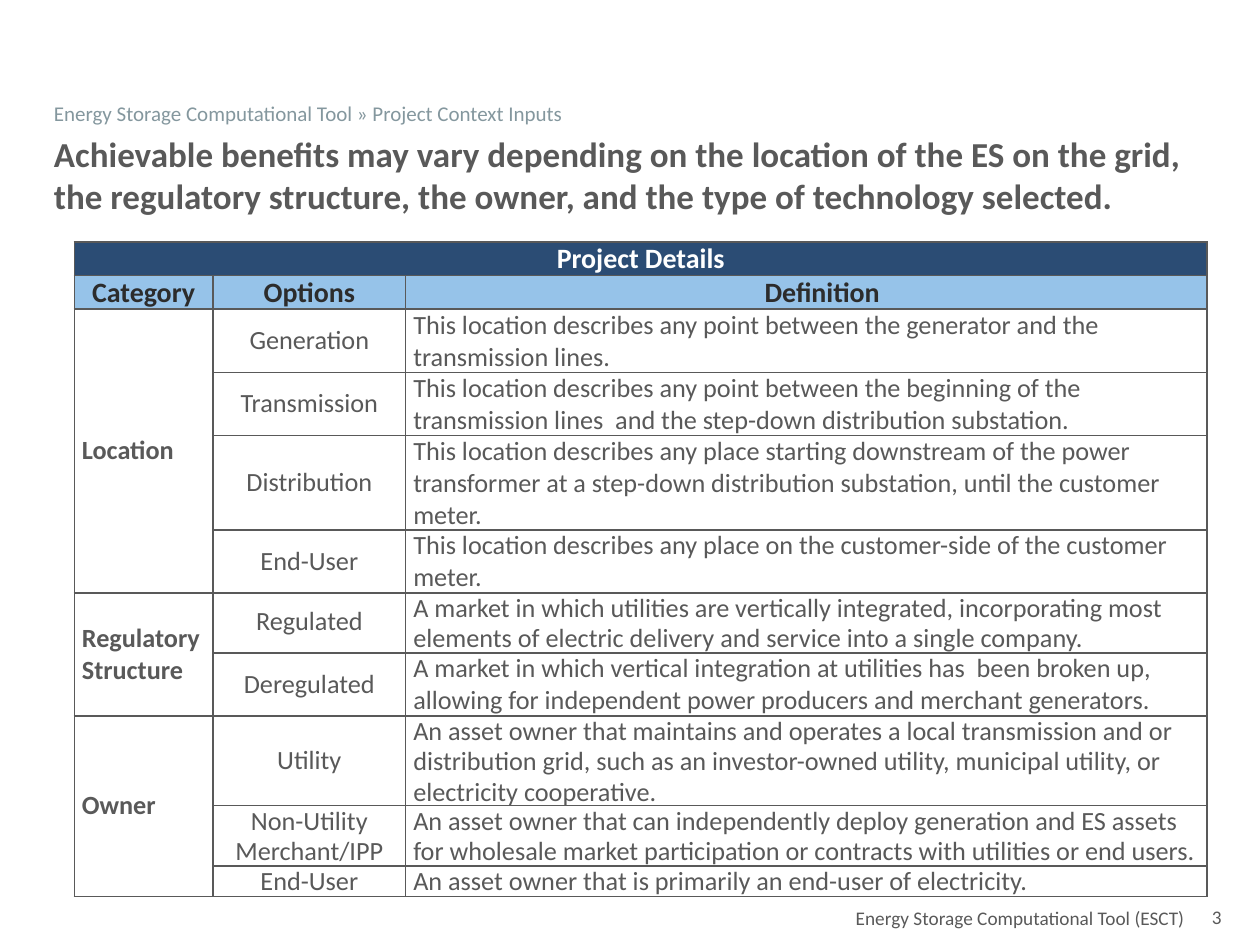
from lxml import etree
from pptx import Presentation
from pptx.dml.color import RGBColor
from pptx.enum.text import MSO_ANCHOR, PP_ALIGN
from pptx.oxml.ns import qn
from pptx.util import Inches, Pt

GREY = RGBColor(0x59, 0x59, 0x59)
SLATE = RGBColor(0x84, 0x97, 0x9E)
NAVY = RGBColor(0x2B, 0x4C, 0x74)
SKY = RGBColor(0x96, 0xC3, 0xE9)
INK = RGBColor(0x2C, 0x2C, 0x2C)
WHITE = RGBColor(0xFF, 0xFF, 0xFF)


def write_text(frame, text, size=15, color=GREY, bold=False, align=PP_ALIGN.LEFT, spacing=None):
    frame.word_wrap = True
    paragraph = frame.paragraphs[0]
    paragraph.alignment = align
    paragraph.line_spacing = spacing
    run = paragraph.add_run()
    run.text = text
    run.font.name = "Calibri"
    run.font.size = Pt(size)
    run.font.bold = bold
    run.font.color.rgb = color
    return paragraph


def style_cell(cell, fill=None, anchor=MSO_ANCHOR.MIDDLE):
    cell.margin_left = cell.margin_right = Inches(0.06)
    cell.margin_top = cell.margin_bottom = 0
    cell.vertical_anchor = anchor
    properties = cell._tc.get_or_add_tcPr()
    for side in ("a:lnL", "a:lnR", "a:lnT", "a:lnB"):
        line = etree.SubElement(properties, qn(side), w=str(Pt(1)))
        solid = etree.SubElement(line, qn("a:solidFill"))
        etree.SubElement(solid, qn("a:srgbClr"), val=str(GREY))
    if fill is None:
        cell.fill.background()
    else:
        cell.fill.solid()
        cell.fill.fore_color.rgb = fill


presentation = Presentation()
presentation.slide_width = Inches(10)
presentation.slide_height = Inches(7.5)
slide = presentation.slides.add_slide(presentation.slide_layouts[6])

# Footer, page number, headline and breadcrumb
text_boxes = [
    (3.08, 7.14, 6.42, 0.25, "Energy Storage Computational Tool (ESCT)",
     dict(size=11, align=PP_ALIGN.RIGHT)),
    (9.52, 7.15, 0.58, 0.26, "3", dict(size=11)),
    (0.33, 1, 9.42, 0.74,
     "Achievable benefits may vary depending on the location of the ES on the grid, "
     "the regulatory structure, the owner, and the type of technology selected.",
     dict(size=20, bold=True)),
    (0.33, 0.75, 9.3, 0.25, "Energy Storage Computational Tool » Project Context Inputs",
     dict(size=12, color=SLATE)),
]
for left, top, width, height, text, text_format in text_boxes:
    box = slide.shapes.add_textbox(Inches(left), Inches(top), Inches(width), Inches(height))
    write_text(box.text_frame, text, **text_format)
    if text == "3":
        box.text_frame.vertical_anchor = MSO_ANCHOR.MIDDLE

# Project details: category, then (option, definition, option spacing, definition spacing)
categories = [
    ("Location", MSO_ANCHOR.MIDDLE, [
        ("Generation", "This location describes any point between the generator and the "
         "transmission lines.", None, None),
        ("Transmission", "This location describes any point between the beginning of the "
         "transmission lines  and the step-down distribution substation.", None, None),
        ("Distribution", "This location describes any place starting downstream of the power "
         "transformer at a step-down distribution substation, until the customer meter.",
         None, None),
        ("End-User", "This location describes any place on the customer-side of the customer "
         "meter.", None, None),
    ]),
    ("Regulatory Structure", MSO_ANCHOR.TOP, [
        ("Regulated", "A market in which utilities are vertically integrated, incorporating "
         "most elements of electric delivery and service into a single company.",
         Pt(17.2), 0.95),
        ("Deregulated", "A market in which vertical integration at utilities has  been broken "
         "up, allowing for independent power producers and merchant generators.", None, None),
    ]),
    ("Owner", MSO_ANCHOR.TOP, [
        ("Utility", "An asset owner that maintains and operates a local transmission and or "
         "distribution grid, such as an investor-owned utility, municipal utility, or "
         "electricity cooperative.", 0.95, 0.95),
        ("Non-Utility Merchant/IPP", "An asset owner that can independently deploy generation "
         "and ES assets for wholesale market participation or contracts with utilities or end "
         "users.", 0.95, 0.95),
        ("End-User", "An asset owner that is primarily an end-user of electricity.",
         0.95, 0.95),
    ]),
]
column_widths = [1.1, 1.53, 6.36]
row_heights = [0.25, 0.25, 0.38, 0.38, 0.38, 0.25, 0.36, 0.38, 0.48, 0.48, 0.24]

table_shape = slide.shapes.add_table(len(row_heights), len(column_widths), Inches(0.59),
                                     Inches(1.92), Inches(9), Inches(5.19))
table = table_shape.table
for column, width in zip(table.columns, column_widths):
    column.width = Inches(width)
for row, height in zip(table.rows, row_heights):
    row.height = Inches(height)
table_shape.height = Inches(5.19)

# Header rows
for column in range(3):
    style_cell(table.cell(0, column), NAVY)
table.cell(0, 0).merge(table.cell(0, 2))
write_text(table.cell(0, 0).text_frame, "Project Details", size=16, color=WHITE, bold=True,
           align=PP_ALIGN.CENTER)
for column, heading in enumerate(["Category", "Options", "Definition"]):
    cell = table.cell(1, column)
    style_cell(cell, SKY)
    paragraph = write_text(cell.text_frame, heading, size=16, color=INK, bold=True,
                           align=PP_ALIGN.CENTER)
    if heading == "Definition":
        paragraph._p.get_or_add_pPr().set("marL", str(Inches(0.25)))

# Body rows, one merged category cell per group
row = 2
for category, definition_anchor, options in categories:
    first_row = row
    for option, definition, option_spacing, definition_spacing in options:
        style_cell(table.cell(row, 0))
        style_cell(table.cell(row, 1))
        style_cell(table.cell(row, 2), anchor=definition_anchor)
        write_text(table.cell(row, 1).text_frame, option, align=PP_ALIGN.CENTER,
                   spacing=option_spacing)
        write_text(table.cell(row, 2).text_frame, definition, spacing=definition_spacing)
        row += 1
    table.cell(first_row, 0).merge(table.cell(row - 1, 0))
    write_text(table.cell(first_row, 0).text_frame, category, bold=True)

presentation.save("out.pptx")
